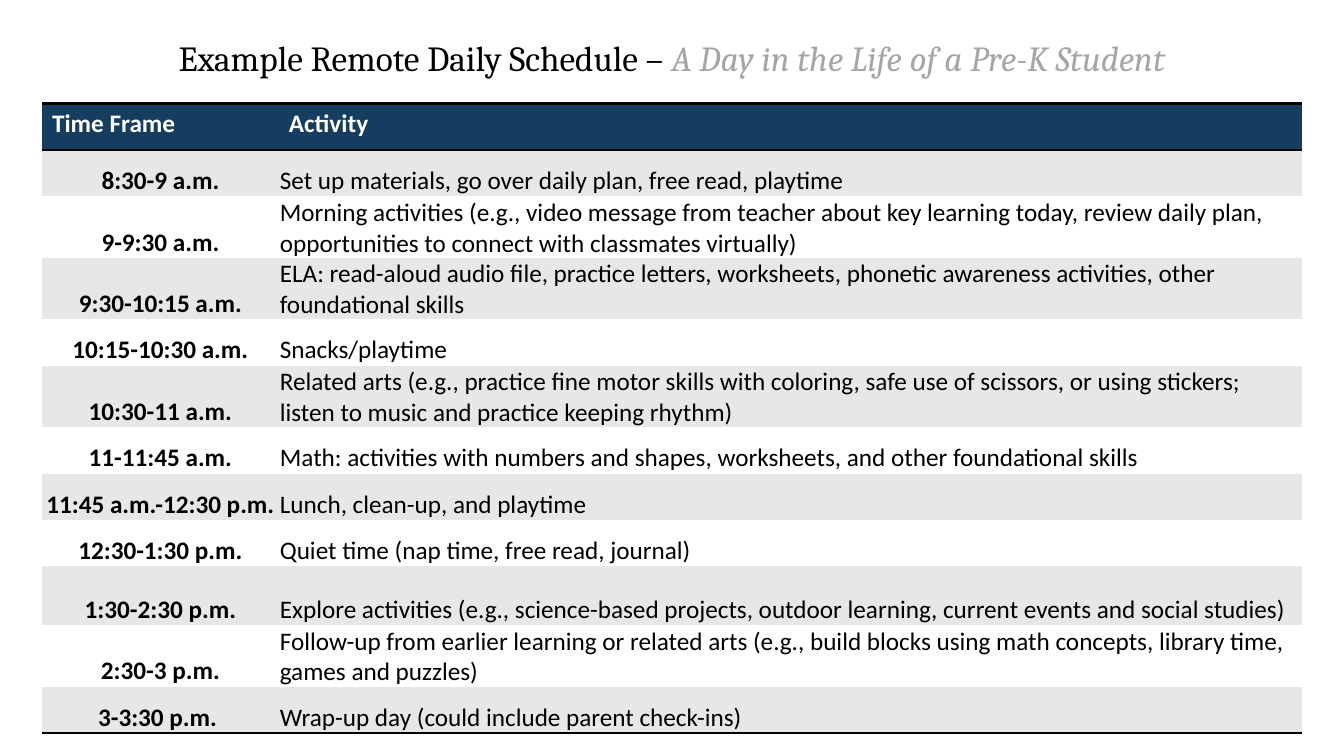
from lxml import etree
from pptx import Presentation
from pptx.dml.color import RGBColor
from pptx.enum.text import MSO_ANCHOR, PP_ALIGN
from pptx.oxml.ns import qn
from pptx.util import Inches, Pt

CENTER, LEFT = PP_ALIGN.CENTER, PP_ALIGN.LEFT
TOP, MIDDLE, BOTTOM = MSO_ANCHOR.TOP, MSO_ANCHOR.MIDDLE, MSO_ANCHOR.BOTTOM
SLIDE_W, SLIDE_H = 13.33, 7.5
PLAIN_TABLE = "{2D5ABB26-0587-4C30-8999-92F81FD0307C}"  # no style, no grid
SHORT, TALL = 0.46, 0.585  # row heights in inches

HEADINGS = ("Time Frame", "Activity")
# Time, activity (a line break starts a new paragraph), row height
SCHEDULE = [
    ("8:30-9 a.m.", "Set up materials, go over daily plan, free read, playtime", SHORT),
    ("9-9:30 a.m.",
     "Morning activities (e.g., video message from teacher about key learning today, "
     "review daily plan,\nopportunities to connect with classmates virtually)", TALL),
    ("9:30-10:15 a.m.",
     "ELA: read-aloud audio file, practice letters, worksheets, phonetic awareness "
     "activities, other\nfoundational skills", TALL),
    ("10:15-10:30 a.m.", "Snacks/playtime", SHORT),
    ("10:30-11 a.m.",
     "Related arts (e.g., practice fine motor skills with coloring, safe use of scissors, "
     "or using stickers; listen to music and practice keeping rhythm)", TALL),
    ("11-11:45 a.m.",
     "Math: activities with numbers and shapes, worksheets, and other foundational skills",
     SHORT),
    ("11:45 a.m.-12:30 p.m.", "Lunch, clean-up, and playtime", SHORT),
    ("12:30-1:30 p.m.", "Quiet time (nap time, free read, journal)", SHORT),
    ("1:30-2:30 p.m.",
     "Explore activities (e.g., science-based projects, outdoor learning, current events "
     "and social studies)", TALL),
    ("2:30-3 p.m.",
     "Follow-up from earlier learning or related arts (e.g., build blocks using math "
     "concepts, library time,\ngames and puzzles)", TALL),
    ("3-3:30 p.m. ", "Wrap-up day (could include parent check-ins)", SHORT),
]


def rgb(value):
    return RGBColor.from_string(value)


class SlideBuilder:
    """Holds the style and the current slide; places are shares of its size."""
    title_font, body_font = "Cambria", "Calibri"
    black, white, gray = "000000", "FFFFFF", "A6A6A6"
    navy, band = "153D60", "E7E7E7"
    title_size, body_size, rule = 25.2, 18, 2

    def __init__(self, prs):
        self.s = prs.slides.add_slide(prs.slide_layouts[6])

    def box(self, x, y, w, h):
        return (Inches(x * SLIDE_W), Inches(y * SLIDE_H),
                Inches(w * SLIDE_W), Inches(h * SLIDE_H))

    def title(self, place, parts):
        tf = self.s.shapes.add_textbox(*self.box(*place)).text_frame
        tf.word_wrap = True
        tf.vertical_anchor = MIDDLE
        p = tf.paragraphs[0]
        p.alignment, p.line_spacing = CENTER, 0.9
        p.font.name, p.font.size = self.title_font, Pt(self.title_size)
        for text, color, italic in parts:
            r = p.add_run()
            r.text = text
            r.font.color.rgb, r.font.italic = rgb(color), italic

    def cell(self, cell, text, fill, color, bold, align=LEFT, anchor=TOP):
        cell.fill.solid()
        cell.fill.fore_color.rgb = rgb(fill)
        cell.vertical_anchor = anchor
        if anchor == BOTTOM:
            cell.margin_left = cell.margin_right = cell.margin_top = Inches(0.01)
            cell.margin_bottom = 0
        cell.text_frame.text = text
        for p in cell.text_frame.paragraphs:
            p.alignment = align
            p.font.name, p.font.size = self.body_font, Pt(self.body_size)
            p.font.bold, p.font.color.rgb = bold, rgb(color)

    def border(self, cell, side):
        ln = etree.Element(qn(f"a:ln{side}"), w=str(Pt(self.rule)))
        fill = etree.SubElement(ln, qn("a:solidFill"))
        etree.SubElement(fill, qn("a:srgbClr"), val=self.black)
        cell._tc.get_or_add_tcPr().insert(0, ln)

    def schedule(self, place, shares, headings, rows):
        x, y, w, h = self.box(*place)
        table = self.s.shapes.add_table(len(rows) + 1, len(headings), x, y, w, h).table
        table._tbl.tblPr.find(qn("a:tableStyleId")).text = PLAIN_TABLE
        for column, share in zip(table.columns, shares):
            column.width = int(w * share)

        # Header row
        table.rows[0].height = Inches(SHORT)
        for cell, text in zip(table.rows[0].cells, headings):
            self.cell(cell, text, self.navy, self.white, True)
            for side in "BT":  # each goes in front, so the top ends up first
                self.border(cell, side)

        # Banded body rows
        for i, (time, activity, height) in enumerate(rows, 1):
            table.rows[i].height = Inches(height)
            fill = self.band if i % 2 else self.white
            self.cell(table.cell(i, 0), time, fill, self.black, True, CENTER, BOTTOM)
            self.cell(table.cell(i, 1), activity, fill, self.black, False, LEFT, BOTTOM)

        # Closing rule
        for cell in table.rows[len(rows)].cells:
            self.border(cell, "B")


def main():
    prs = Presentation()
    prs.slide_width, prs.slide_height = Inches(SLIDE_W), Inches(SLIDE_H)
    page = SlideBuilder(prs)
    page.title((0.07, 0.02, 0.86, 0.12), [
        ("Example Remote Daily Schedule – ", page.black, False),
        ("A Day in the Life of a Pre-K Student", page.gray, True),
    ])
    margin = 1 / 32
    page.schedule((margin, 0.137, 1 - 2 * margin, 0.83), (0.188, 0.812),
                  HEADINGS, SCHEDULE)
    prs.save("out.pptx")


if __name__ == "__main__":
    main()
